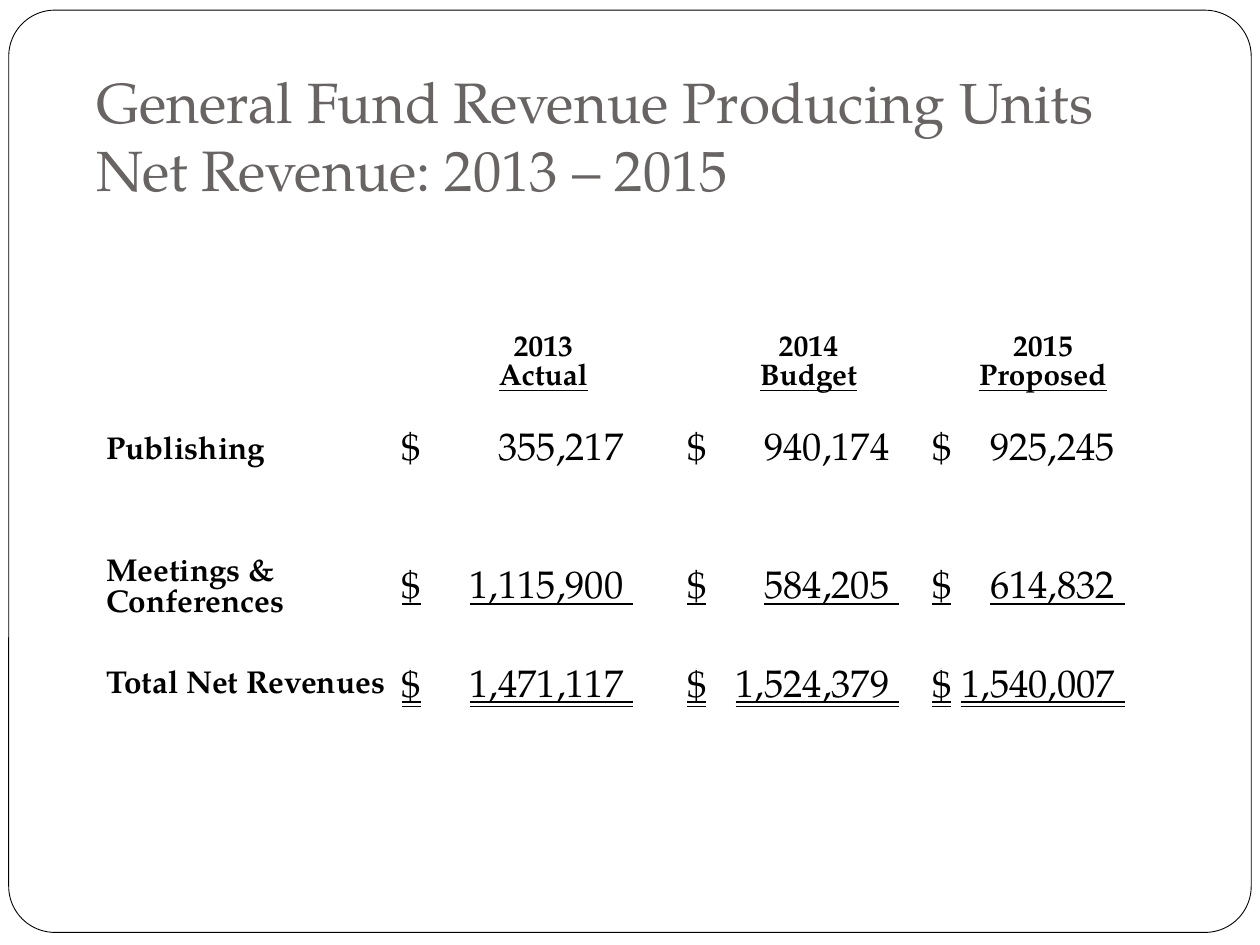
from dataclasses import dataclass

from lxml.etree import SubElement
from pptx import Presentation
from pptx.dml.color import RGBColor as RGB
from pptx.enum.shapes import MSO_SHAPE as Shape
from pptx.enum.text import MSO_ANCHOR as Anchor, MSO_UNDERLINE as Line, PP_ALIGN as Align
from pptx.oxml.ns import qn
from pptx.util import Pt


@dataclass(frozen=True)
class Theme:
    font: str = "TeX Gyre Pagella"
    ink: RGB = RGB(0, 0, 0)
    gray: RGB = RGB(0x69, 0x64, 0x64)
    paper: RGB = RGB(255, 255, 255)
    # Each type style is (size, line pitch) in points
    title: tuple = (32.4, 38.9)
    head: tuple = (17, 16.6)
    label: tuple = (18, 17.7)
    money: tuple = (22, 21.6)


class Deck:
    def __init__(self, theme):
        self.theme = theme
        self.prs = Presentation()
        self.prs.slide_width, self.prs.slide_height = Pt(720), Pt(540)
        self.slide = self.prs.slides.add_slide(self.prs.slide_layouts[6])

    def style(self, para, kind, color=None, bold=False, under=None, align=Align.LEFT):
        size, pitch = kind
        para.alignment = align
        para.line_spacing = Pt(pitch)
        for run in para.runs:
            font = run.font
            font.name, font.size, font.bold = self.theme.font, Pt(size), bold
            font.color.rgb = color or self.theme.ink
            font.underline = under

    def inset(self, box, *sides):
        names = ("margin_left", "margin_top", "margin_right", "margin_bottom")
        for name, side in zip(names, sides):
            setattr(box, name, Pt(side))

    def frame(self, left, top, width, height):
        shape = self.slide.shapes.add_shape(
            Shape.ROUNDED_RECTANGLE, Pt(left), Pt(top), Pt(width), Pt(height))
        shape.adjustments[0] = 0.05
        shape.shadow.inherit = False
        shape.fill.solid()
        shape.fill.fore_color.rgb = self.theme.paper
        shape.line.color.rgb = self.theme.ink
        shape.line.width = Pt(0.5)

    def title(self, text, left, top, width, height):
        box = self.slide.shapes.add_textbox(Pt(left), Pt(top), Pt(width), Pt(height))
        frame = box.text_frame
        frame.word_wrap = True
        frame.vertical_anchor = Anchor.BOTTOM
        self.inset(frame, 7.2, 3.6, 7.2, 46)
        para = frame.paragraphs[0]
        para.text = text
        self.style(para, self.theme.title, self.theme.gray)

    def table(self, left, top, cols, rows):
        shape = self.slide.shapes.add_table(
            len(rows), len(cols), Pt(left), Pt(top), Pt(sum(cols)), Pt(sum(rows)))
        grid = shape.table
        grid.first_row = grid.horz_banding = False
        for col, width in zip(grid.columns, cols):
            col.width = Pt(width)
        for row, height in zip(grid.rows, rows):
            row.height = Pt(height)
        for cell in grid.iter_cells():
            cell.fill.background()
            self.inset(cell, 0.7, 0.7, 0.7, 0)
        return grid

    def head(self, cell, year, name):
        cell.text_frame.text = f"{year}\n{name}"
        cell.vertical_anchor = Anchor.BOTTOM
        for para, under in zip(cell.text_frame.paragraphs, (None, True)):
            self.style(para, self.theme.head, bold=True, under=under, align=Align.CENTER)

    def label(self, cell, text, anchor):
        cell.text_frame.text = text
        cell.vertical_anchor = anchor
        self.style(cell.text_frame.paragraphs[0], self.theme.label, bold=True)

    def money(self, cell, value, stop, anchor, under):
        cell.vertical_anchor = anchor
        para = cell.text_frame.paragraphs[0]
        para.text = f"$\t{value:,} "
        self.style(para, self.theme.money, under=under)
        # Right tab stop lines up the amounts
        tabs = SubElement(para._p.get_or_add_pPr(), qn("a:tabLst"))
        SubElement(tabs, qn("a:tab"), pos=str(Pt(stop)), algn="r")


def main():
    deck = Deck(Theme())

    # Frame and title
    deck.frame(5, 5.8, 710, 527)
    deck.title("General Fund Revenue Producing Units\vNet Revenue: 2013 – 2015",
               48, 48, 672, 114)

    # Revenue table
    heads = [("2013", "Actual"), ("2014", "Budget"), ("2015", "Proposed")]
    stops = (132, 121, 110)
    units = [
        ("Publishing", (355217, 940174, 925245), Anchor.MIDDLE, None),
        ("Meetings & Conferences", (1115900, 584205, 614832), Anchor.MIDDLE, True),
        ("Total Net Revenues", (1471117, 1524379, 1540007), Anchor.TOP, Line.DOUBLE_LINE),
    ]
    grid = deck.table(60, 177, (169, 163, 140, 128), (48, 66, 91.5, 97))
    for col, (year, name) in enumerate(heads, 1):
        deck.head(grid.cell(0, col), year, name)
    for row, (unit, sums, anchor, under) in enumerate(units, 1):
        deck.label(grid.cell(row, 0), unit, anchor)
        for col, (value, stop) in enumerate(zip(sums, stops), 1):
            deck.money(grid.cell(row, col), value, stop, anchor, under)

    deck.prs.save("out.pptx")


if __name__ == "__main__":
    main()
